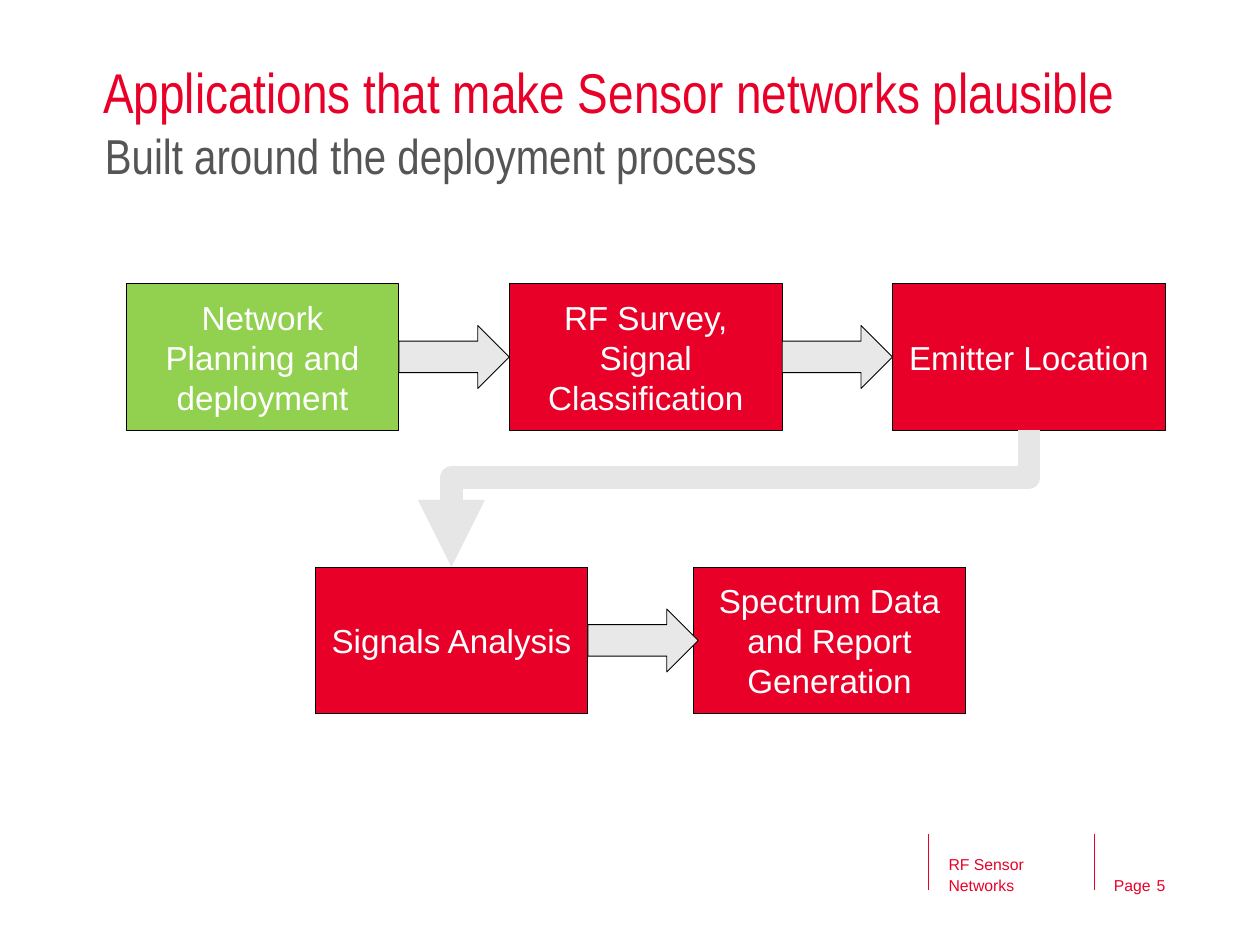
from lxml.etree import SubElement
from pptx import Presentation
from pptx.dml.color import RGBColor
from pptx.enum.shapes import MSO_CONNECTOR, MSO_SHAPE
from pptx.enum.text import MSO_ANCHOR, PP_ALIGN
from pptx.oxml.ns import qn
from pptx.util import Pt

COLORS = {
    "red": "E90029",
    "green": "92D050",
    "gray": "555555",
    "arrow": "E8E8E8",
    "elbow": "E6E6E6",
    "black": "000000",
    "white": "FFFFFF",
}

presentation = Presentation()
presentation.slide_width, presentation.slide_height = Pt(720), Pt(540)
slide = presentation.slides.add_slide(presentation.slide_layouts[6])


def add_label(text, left, top, width, height, size, font, color, anchor, spacing, wrap=True):
    shape = slide.shapes.add_textbox(Pt(left), Pt(top), Pt(width), Pt(height))
    text_frame = shape.text_frame
    text_frame.margin_left = text_frame.margin_right = 0
    text_frame.margin_top = text_frame.margin_bottom = 0
    text_frame.word_wrap = wrap
    text_frame.vertical_anchor = anchor
    text_frame.text = text
    paragraph = text_frame.paragraphs[0]
    paragraph.line_spacing = spacing
    run_font = paragraph.runs[0].font
    run_font.size, run_font.name = Pt(size), font
    run_font.color.rgb = RGBColor.from_string(COLORS[color])


def add_block(preset, left, top, width, height, fill):
    shape = slide.shapes.add_shape(preset, Pt(left), Pt(top), Pt(width), Pt(height))
    shape.shadow.inherit = False
    shape.fill.solid()
    shape.fill.fore_color.rgb = RGBColor.from_string(COLORS[fill])
    shape.line.color.rgb = RGBColor.from_string(COLORS["black"])
    shape.line.width = Pt(0.5)
    return shape


# Title and subtitle
add_label("Applications that make Sensor networks plausible", 59, 32, 636.5, 40,
          32, "Arial Narrow", "red", MSO_ANCHOR.BOTTOM, 0.9)
add_label("Built around the deployment process", 60, 72, 570, 36,
          28, "Arial Narrow", "gray", MSO_ANCHOR.TOP, 1.0)

# Footer texts
for text, left, top, width, height, wrap in [
    ("RF Sensor Networks", 542, 474.5, 82, 36.5, True),
    ("Page", 636.5, 499.5, 21, 12, False),
    ("5", 661, 482.5, 21.5, 28.5, True),
]:
    add_label(text, left, top, width, height, 9, "Arial", "red", MSO_ANCHOR.BOTTOM, 1.1, wrap)

# Process steps
BOX_WIDTH, BOX_HEIGHT = 156, 84
ROW_1, ROW_2 = 162, 324
for text, left, top, fill in [
    ("Network Planning and deployment", 72, ROW_1, "green"),
    ("RF Survey, Signal Classification", 291, ROW_1, "red"),
    ("Emitter Location", 510, ROW_1, "red"),
    ("Signals Analysis", 180, ROW_2, "red"),
    ("Spectrum Data and Report Generation", 396, ROW_2, "red"),
]:
    shape = add_block(MSO_SHAPE.RECTANGLE, left, top, BOX_WIDTH, BOX_HEIGHT, fill)
    text_frame = shape.text_frame
    text_frame.word_wrap = True
    text_frame.vertical_anchor = MSO_ANCHOR.MIDDLE
    text_frame.text = text
    paragraph = text_frame.paragraphs[0]
    paragraph.alignment = PP_ALIGN.CENTER
    run_font = paragraph.runs[0].font
    run_font.size, run_font.name = Pt(19), "Arial"
    run_font.color.rgb = RGBColor.from_string(COLORS["white"])

# Arrows that start at the right edge of a step
for box_left, row in [(72, ROW_1), (291, ROW_1), (180, ROW_2)]:
    add_block(MSO_SHAPE.RIGHT_ARROW, box_left + BOX_WIDTH, row + 24, 63, 36, "arrow")

# Footer dividers and the elbow between the rows, laid out before its quarter turn
for kind, start_x, start_y, end_x, end_y, color, width in [
    (MSO_CONNECTOR.STRAIGHT, 530.75, 476.5, 530.75, 508.5, "red", 0.5),
    (MSO_CONNECTOR.STRAIGHT, 625.5, 476.5, 625.5, 508.5, "red", 0.5),
    (MSO_CONNECTOR.ELBOW, 384, 120, 462, 450, "elbow", 12.75),
]:
    connector = slide.shapes.add_connector(kind, Pt(start_x), Pt(start_y), Pt(end_x), Pt(end_y))
    connector.line.color.rgb = RGBColor.from_string(COLORS[color])
    connector.line.width = Pt(width)
    properties = connector._element.spPr
    if kind == MSO_CONNECTOR.ELBOW:
        properties.find(qn("a:xfrm")).set("rot", "5400000")
        adjustments = properties.find(qn("a:prstGeom")).find(qn("a:avLst"))
        SubElement(adjustments, qn("a:gd"), name="adj1", fmla="val 34500")
        SubElement(properties.find(qn("a:ln")), qn("a:tailEnd"), type="triangle")
    SubElement(properties, qn("a:effectLst"))

presentation.save("out.pptx")
